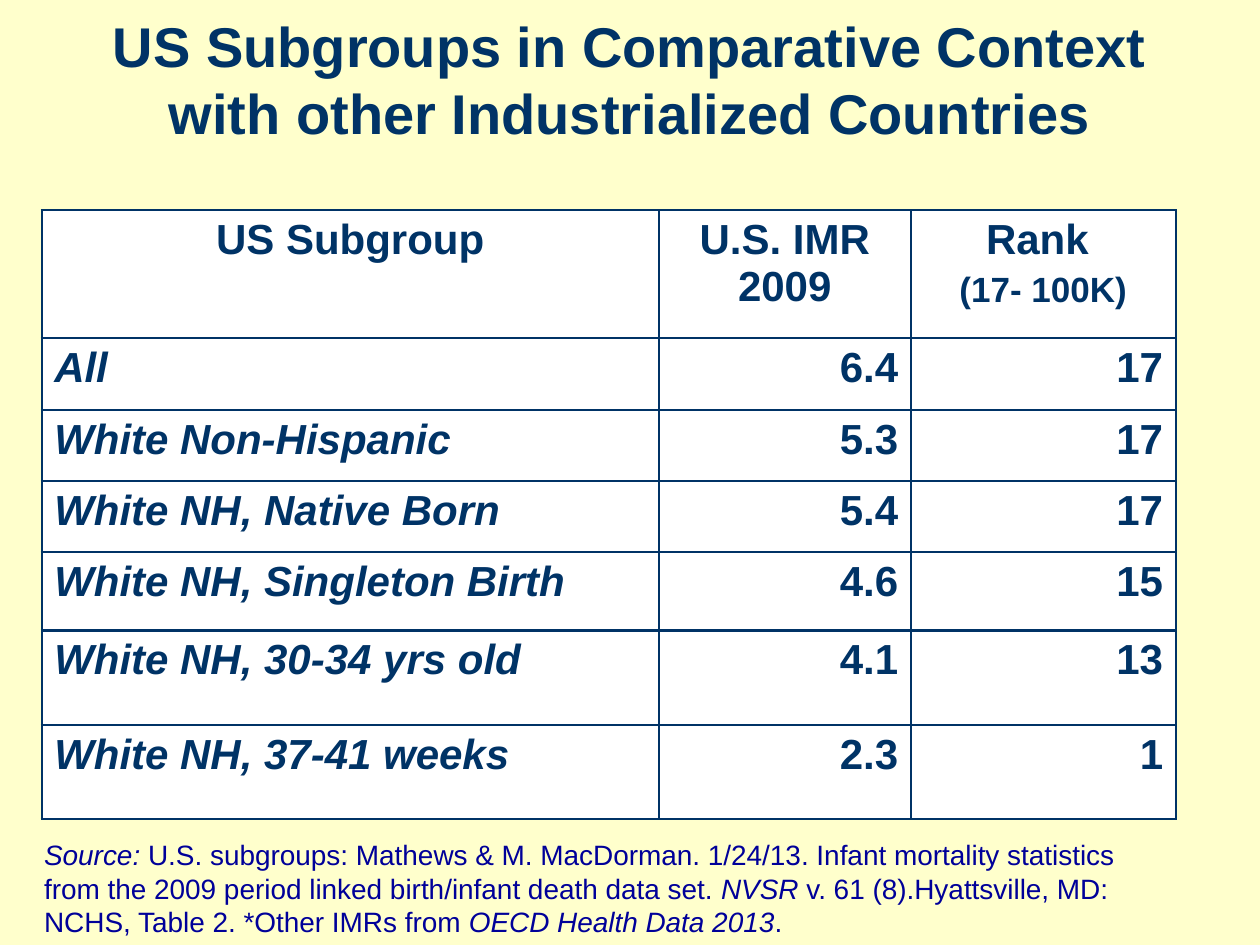
import pptx
import pptx.util
import pptx.dml.color
import pptx.enum.text
import pptx.oxml
import pptx.oxml.ns

Cm, Pt = pptx.util.Cm, pptx.util.Pt
RGB = pptx.dml.color.RGBColor
Align = pptx.enum.text.PP_ALIGN
Anchor = pptx.enum.text.MSO_ANCHOR

CREAM = RGB(0xFF, 0xFF, 0xCC)
WHITE = RGB(0xFF, 0xFF, 0xFF)
NAVY = RGB(0x00, 0x33, 0x66)
BLUE = RGB(0x00, 0x00, 0x99)

TITLE = "US Subgroups in Comparative Context\vwith other Industrialized Countries"
HEAD = ("US Subgroup", "U.S. IMR 2009", "Rank \n(17- 100K)")
ROWS = [
    ("All", "6.4", "17"),
    ("White Non-Hispanic", "5.3", "17"),
    ("White NH, Native Born", "5.4", "17"),
    ("White NH, Singleton Birth", "4.6", "15"),
    ("White NH, 30-34 yrs old", "4.1", "13"),
    ("White NH, 37-41 weeks", "2.3", "1"),
]
WIDTHS = (12.44, 5.08, 5.34)
HEIGHTS = (2.58, 1.44, 1.44, 1.43, 1.58, 1.9, 1.9)
# Source note: (text, italic)
NOTE = [
    ("Source:", True),
    (" U.S. subgroups: Mathews & M. MacDorman. 1/24/13. Infant mortality statistics "
     "from the 2009 period linked birth/infant death data set. ", False),
    ("NVSR", True),
    (" v. 61 (8).Hyattsville, MD: NCHS, Table 2. *Other IMRs from ", False),
    ("OECD Health Data 2013", True),
    (".", False),
]


def style(para, size, color, bold=False, align=Align.LEFT):
    para.alignment = align
    font = para.font
    font.name, font.size, font.bold = "Arial", Pt(size), bold
    font.color.rgb = color


def add_box(slide, left, top, width, height):
    box = slide.shapes.add_textbox(Cm(left), Cm(top), Cm(width), Cm(height))
    box.text_frame.word_wrap = True
    return box


def add_edges(cell):
    """Draw all four borders; they must precede the cell's fill."""
    props = cell._tc.get_or_add_tcPr()
    for side in "LRTB":
        props.append(pptx.oxml.parse_xml(
            f'<a:ln{side} {pptx.oxml.ns.nsdecls("a")} w="{Pt(1.5)}">'
            f'<a:solidFill><a:srgbClr val="{NAVY}"/></a:solidFill></a:ln{side}>'))


def add_grid(slide):
    data = [HEAD] + ROWS
    grid = slide.shapes.add_table(
        len(data), len(HEAD), Cm(0.84), Cm(4.24),
        Cm(sum(WIDTHS)), Cm(sum(HEIGHTS))).table
    grid.first_row = grid.horz_banding = False
    for col, width in zip(grid.columns, WIDTHS):
        col.width = Cm(width)
    for row, height in zip(grid.rows, HEIGHTS):
        row.height = Cm(height)
    for r, row in enumerate(data):
        for c, text in enumerate(row):
            cell = grid.cell(r, c)
            add_edges(cell)
            cell.fill.solid()
            cell.fill.fore_color.rgb = WHITE
            cell.text = text
            align = Align.CENTER if r == 0 else Align.RIGHT if c else Align.LEFT
            for n, para in enumerate(cell.text_frame.paragraphs):
                style(para, 20 if n else 24, NAVY, True, align)
                para.font.italic = r > 0 and c == 0
                if n:
                    para.space_before = Pt(4)


def main():
    deck = pptx.Presentation()
    deck.slide_width, deck.slide_height = Cm(25.4), Cm(19.05)
    slide = deck.slides.add_slide(deck.slide_layouts[6])
    back = slide.background.fill
    back.solid()
    back.fore_color.rgb = CREAM

    title = add_box(slide, 0, 0, 25.4, 3.18)
    title.fill.solid()
    title.fill.fore_color.rgb = CREAM
    title.text_frame.vertical_anchor = Anchor.MIDDLE
    title.text_frame.text = TITLE
    style(title.text_frame.paragraphs[0], 32, NAVY, True, Align.CENTER)

    add_grid(slide)

    para = add_box(slide, 0.64, 16.76, 23.11, 2.29).text_frame.paragraphs[0]
    style(para, 16, BLUE)
    for text, slant in NOTE:
        run = para.add_run()
        run.text = text
        run.font.italic = slant

    deck.save("out.pptx")


if __name__ == "__main__":
    main()
